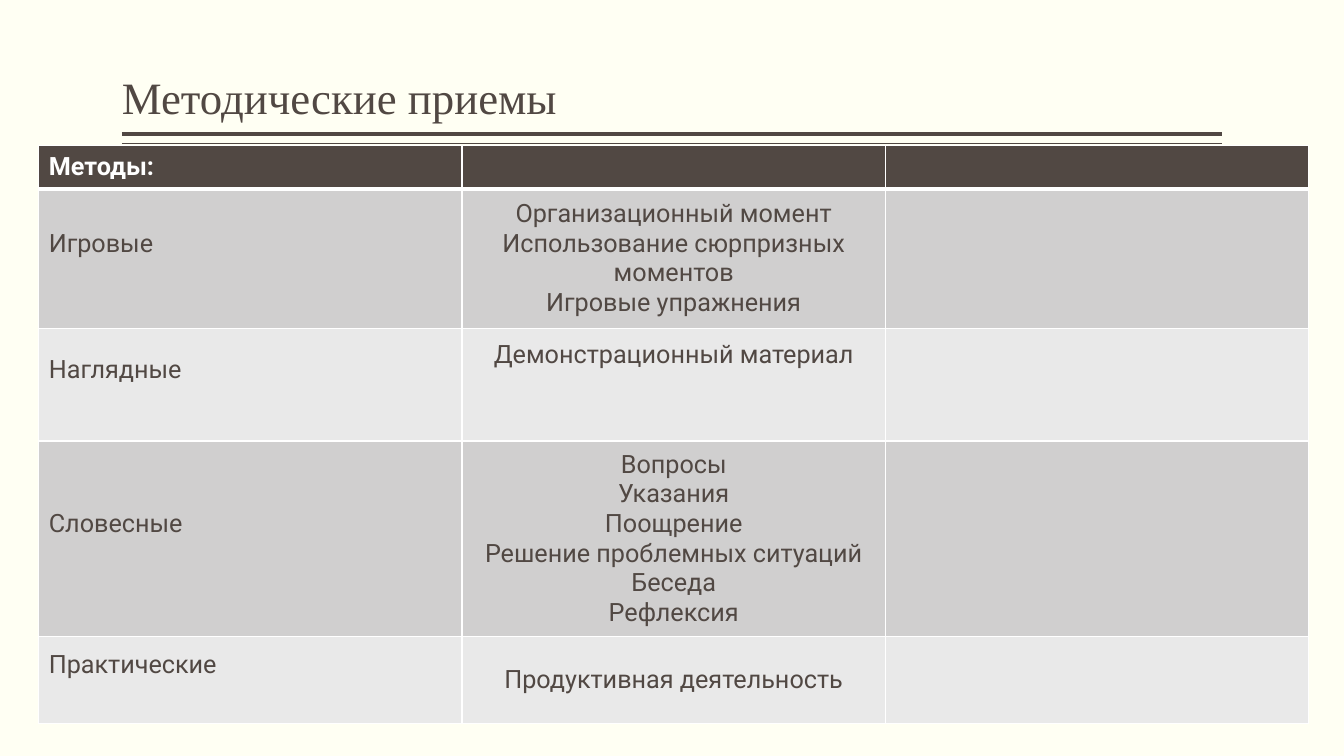
import pptx
import pptx.dml.color
import pptx.enum.shapes
import pptx.enum.text
import pptx.oxml
import pptx.oxml.ns
import pptx.util
from dataclasses import dataclass

Pt = pptx.util.Pt
ANCHOR = pptx.enum.text.MSO_ANCHOR
ALIGN = pptx.enum.text.PP_ALIGN


@dataclass(frozen=True)
class Theme:
    background: str = "FFFFF3"
    dark: str = "514843"
    white: str = "FFFFFF"
    bands: tuple = ("D0CFCF", "E9E9E9")
    title_font: str = "Times New Roman"
    body_font: str = "Roboto"
    title_size: float = 32
    body_size: float = 18


def rgb(color):
    return pptx.dml.color.RGBColor.from_string(color)


class SlideBuilder:
    def __init__(self, slide, theme):
        self.slide = slide
        self.theme = theme
        fill = slide.background.fill
        fill.solid()
        fill.fore_color.rgb = rgb(theme.background)

    def style(self, p, font, size, color, bold=False):
        p.font.name = font
        p.font.size = Pt(size)
        p.font.color.rgb = rgb(color)
        p.font.bold = bold

    def title(self, text, x, y, w, h):
        tf = self.slide.shapes.add_textbox(Pt(x), Pt(y), Pt(w), Pt(h)).text_frame
        tf.word_wrap = True
        tf.vertical_anchor = ANCHOR.BOTTOM
        tf.margin_left = tf.margin_right = 0
        p = tf.paragraphs[0]
        p.text = text
        p.line_spacing = 0.9
        self.style(p, self.theme.title_font, self.theme.title_size, self.theme.dark)

    def rule(self, x, y, w, weight):
        line = self.slide.shapes.add_connector(
            pptx.enum.shapes.MSO_CONNECTOR.STRAIGHT, Pt(x), Pt(y), Pt(x + w), Pt(y))
        line.line.color.rgb = rgb(self.theme.dark)
        line.line.width = Pt(weight)
        line._element.spPr.append(pptx.oxml.parse_xml(
            f"<a:effectLst {pptx.oxml.ns.nsdecls('a')}/>"))

    def borders(self, cell, weights):
        """Draw white borders; weights maps each side (L, R, T, B) to points."""
        tcPr = cell._tc.get_or_add_tcPr()
        for side, weight in weights.items():
            tcPr.append(pptx.oxml.parse_xml(
                f"<a:ln{side} {pptx.oxml.ns.nsdecls('a')} w='{Pt(weight)}'>"
                f"<a:solidFill><a:srgbClr val='{self.theme.white}'/></a:solidFill>"
                f"</a:ln{side}>"))

    def cell(self, cell, lines, fill, color, bold, align, raise_by, weights):
        """Fill one cell; raise_by is extra bottom margin that lifts the text."""
        self.borders(cell, weights)
        cell.fill.solid()
        cell.fill.fore_color.rgb = rgb(fill)
        cell.vertical_anchor = ANCHOR.MIDDLE
        cell.margin_bottom = Pt(3.6 + raise_by)
        cell.text = "\n".join(lines)
        for p in cell.text_frame.paragraphs:
            p.alignment = align
            self.style(p, self.theme.body_font, self.theme.body_size, color, bold)

    def table(self, rows, x, y, col_width, columns):
        """Each row is (height, [(lines, raise_by), ...]); missing cells stay empty."""
        table = self.slide.shapes.add_table(
            len(rows), columns, Pt(x), Pt(y), Pt(col_width * columns),
            Pt(sum(height for height, _ in rows))).table
        for column in table.columns:
            column.width = Pt(col_width)
        for i, (height, contents) in enumerate(rows):
            table.rows[i].height = Pt(height)
            header = i == 0
            fill = self.theme.dark if header else self.theme.bands[(i - 1) % 2]
            color = self.theme.white if header else self.theme.dark
            weights = {"L": 1, "R": 1, "T": 3 if i == 1 else 1, "B": 3 if header else 1}
            for j in range(columns):
                lines, raise_by = contents[j] if j < len(contents) else ([], 0)
                align = ALIGN.CENTER if j == 1 else ALIGN.LEFT
                self.cell(table.cell(i, j), lines, fill, color, header,
                          align, raise_by, weights)


LINE = 21  # height of one line of body text
METHODS = [
    (31, [(["Методы:"], 0)]),
    (99.4, [(["Игровые"], LINE),
            (["Организационный момент", "Использование сюрпризных моментов",
              "Игровые упражнения"], 0)]),
    (80.6, [(["Наглядные"], LINE), (["Демонстрационный материал"], 2 * LINE)]),
    (139.7, [(["Словесные"], LINE),
             (["Вопросы", "Указания", "Поощрение", "Решение проблемных ситуаций",
               "Беседа", "Рефлексия"], 0)]),
    (61.9, [(["Практические"], LINE), (["Продуктивная деятельность"], 0)]),
]


def main():
    prs = pptx.Presentation()
    prs.slide_width, prs.slide_height = Pt(960), Pt(540)
    s = SlideBuilder(prs.slides.add_slide(prs.slide_layouts[6]), Theme())
    left, width = 87, 786
    for y, weight in ((95.8, 3), (102.6, 1)):
        s.rule(left, y, width, weight)
    s.title("Методические приемы", left, 6, width, 86.4)
    s.table(METHODS, 27.7, 104, 302.4, 3)
    prs.save("out.pptx")


if __name__ == "__main__":
    main()
